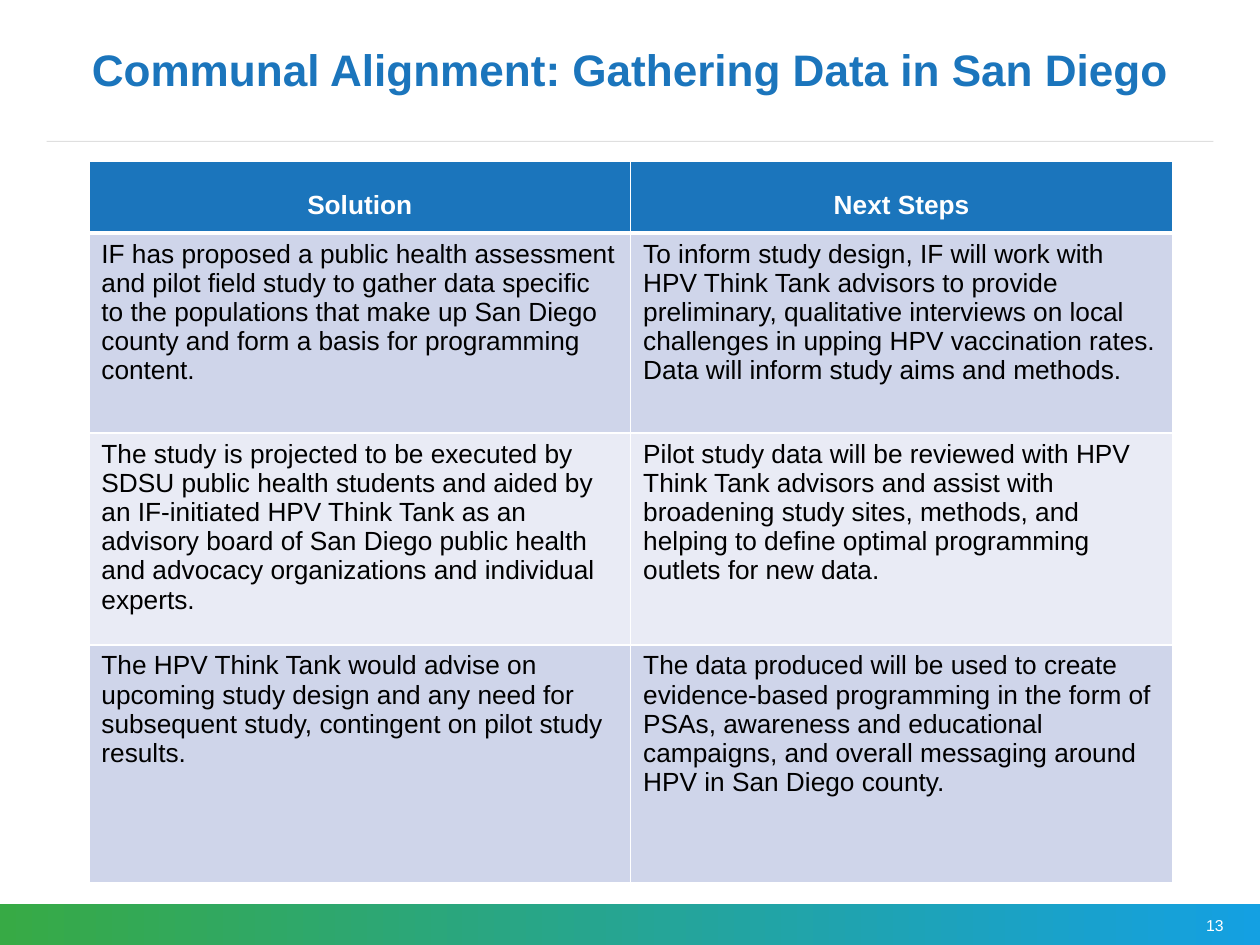
from dataclasses import dataclass

from lxml import etree
from pptx import Presentation
from pptx.dml.color import RGBColor
from pptx.enum.shapes import MSO_CONNECTOR, MSO_SHAPE
from pptx.enum.text import MSO_ANCHOR, MSO_AUTO_SIZE, PP_ALIGN
from pptx.oxml.ns import qn
from pptx.util import Pt

RECTANGLE = MSO_SHAPE.RECTANGLE
STRAIGHT = MSO_CONNECTOR.STRAIGHT
MIDDLE, TOP = MSO_ANCHOR.MIDDLE, MSO_ANCHOR.TOP
LEFT, CENTER, RIGHT = PP_ALIGN.LEFT, PP_ALIGN.CENTER, PP_ALIGN.RIGHT
NO_AUTOFIT = MSO_AUTO_SIZE.NONE
TITLE_ONLY = 5


@dataclass(frozen=True)
class Theme:
    font: str = "Arial"
    blue: str = "1B75BC"
    white: str = "FFFFFF"
    black: str = "000000"
    rule: str = "5F6060"
    band_start: str = "37AA45"
    band_end: str = "14A0E2"
    row_fills: tuple[str, str] = ("CFD5EA", "E9EBF5")
    title_size: float = 25.2
    table_size: float = 15
    number_size: float = 9


@dataclass(frozen=True)
class Box:
    left: float
    top: float
    width: float
    height: float

    def lengths(self):
        return Pt(self.left), Pt(self.top), Pt(self.width), Pt(self.height)


@dataclass(frozen=True)
class Row:
    height: float
    solution: str
    next_steps: str


THEME = Theme()
SLIDE_WIDTH, SLIDE_HEIGHT = 720, 540
TITLE_BOX = Box(26.64, 17.28, 666.72, 47.52)
RULE_Y = 80.8
TABLE_BOX = Box(50.76, 92.16, 619.2, 413.0)
BAND_BOX = Box(0, 516.5, SLIDE_WIDTH, 23.5)
NUMBER_BOX = Box(544.32, 521.28, 162, 14.4)
HEADER_TOP_MARGIN = 17

ROWS = (
    Row(41, "Solution", "Next Steps"),
    Row(
        114.4,
        "IF has proposed a public health assessment and pilot field study to gather "
        "data specific to the populations that make up San Diego county and form a "
        "basis for programming content.",
        "To inform study design, IF will work with HPV Think Tank advisors to provide "
        "preliminary, qualitative interviews on local challenges in upping HPV "
        "vaccination rates. Data will inform study aims and methods.",
    ),
    Row(
        121,
        "The study is projected to be executed by SDSU public health students and "
        "aided by an IF-initiated HPV Think Tank as an advisory board of San Diego "
        "public health and advocacy organizations and individual experts.",
        "Pilot study data will be reviewed with HPV Think Tank advisors and assist "
        "with broadening study sites, methods, and helping to define optimal "
        "programming outlets for new data.",
    ),
    Row(
        136,
        "The HPV Think Tank would advise on upcoming study design and any need for "
        "subsequent study, contingent on pilot study results.",
        "The data produced will be used to create evidence-based programming in the "
        "form of PSAs, awareness and educational campaigns, and overall messaging "
        "around HPV in San Diego county.",
    ),
)


def rgb(color: str) -> RGBColor:
    return RGBColor.from_string(color)


def write_text(frame, text: str, size: float, color: str, alignment, bold=False) -> None:
    frame.text = text
    frame.word_wrap = True
    paragraph = frame.paragraphs[0]
    paragraph.alignment = alignment
    font = paragraph.font
    font.name, font.size, font.bold = THEME.font, Pt(size), bold
    font.color.rgb = rgb(color)


def add_band(slide) -> None:
    band = slide.shapes.add_shape(RECTANGLE, *BAND_BOX.lengths())
    band.shadow.inherit = False
    band.line.fill.background()
    band.fill.gradient()
    band.fill.gradient_angle = 0
    for stop, color in zip(band.fill.gradient_stops, (THEME.band_start, THEME.band_end)):
        stop.color.rgb = rgb(color)


def add_rule(slide) -> None:
    """Draw the faint line under the title, at 20 % opacity."""
    left, right = TITLE_BOX.left, TITLE_BOX.left + TITLE_BOX.width
    rule = slide.shapes.add_connector(STRAIGHT, Pt(left), Pt(RULE_Y), Pt(right), Pt(RULE_Y))
    rule.line.width = Pt(0.5)
    rule.line.color.rgb = rgb(THEME.rule)
    properties = rule._element.spPr
    color = properties.find(".//" + qn("a:srgbClr"))
    etree.SubElement(color, qn("a:alpha"), val="20000")
    etree.SubElement(properties, qn("a:effectLst"))


def format_title(slide, text: str) -> None:
    title = slide.shapes.title
    title.left, title.top, title.width, title.height = TITLE_BOX.lengths()
    frame = title.text_frame
    write_text(frame, text, THEME.title_size, THEME.blue, CENTER, bold=True)
    frame.auto_size = NO_AUTOFIT
    frame.vertical_anchor = MIDDLE
    frame.paragraphs[0].line_spacing = 0.9


def add_page_number(slide, number: int) -> None:
    frame = slide.shapes.add_textbox(*NUMBER_BOX.lengths()).text_frame
    write_text(frame, str(number), THEME.number_size, THEME.white, RIGHT)
    frame.vertical_anchor = MIDDLE


def set_borders(cell, top: float, bottom: float) -> None:
    properties = cell._tc.get_or_add_tcPr()
    widths = {"a:lnL": 1, "a:lnR": 1, "a:lnT": top, "a:lnB": bottom}
    for index, (tag, width) in enumerate(widths.items()):
        line = etree.Element(qn(tag), w=str(Pt(width)))
        fill = etree.SubElement(line, qn("a:solidFill"))
        etree.SubElement(fill, qn("a:srgbClr"), val=THEME.white)
        properties.insert(index, line)


def add_table(slide, rows: tuple[Row, ...]) -> None:
    table = slide.shapes.add_table(len(rows), 2, *TABLE_BOX.lengths()).table
    for column in table.columns:
        column.width = Pt(TABLE_BOX.width / 2)
    for index, row in enumerate(rows):
        table.rows[index].height = Pt(row.height)
        header = index == 0
        fill = THEME.blue if header else THEME.row_fills[(index - 1) % 2]
        color = THEME.white if header else THEME.black
        alignment = CENTER if header else LEFT
        for column_index, text in enumerate((row.solution, row.next_steps)):
            cell = table.cell(index, column_index)
            write_text(cell.text_frame, text, THEME.table_size, color, alignment, header)
            cell.vertical_anchor = TOP
            if header:
                cell.margin_top = Pt(HEADER_TOP_MARGIN)
            cell.fill.solid()
            cell.fill.fore_color.rgb = rgb(fill)
            set_borders(cell, top=3 if index == 1 else 1, bottom=3 if header else 1)


def main() -> None:
    presentation = Presentation()
    presentation.slide_width, presentation.slide_height = Pt(SLIDE_WIDTH), Pt(SLIDE_HEIGHT)
    slide = presentation.slides.add_slide(presentation.slide_layouts[TITLE_ONLY])
    format_title(slide, "Communal Alignment: Gathering Data in San Diego")
    add_band(slide)
    add_rule(slide)
    add_page_number(slide, 13)
    add_table(slide, ROWS)
    presentation.save("out.pptx")


if __name__ == "__main__":
    main()
